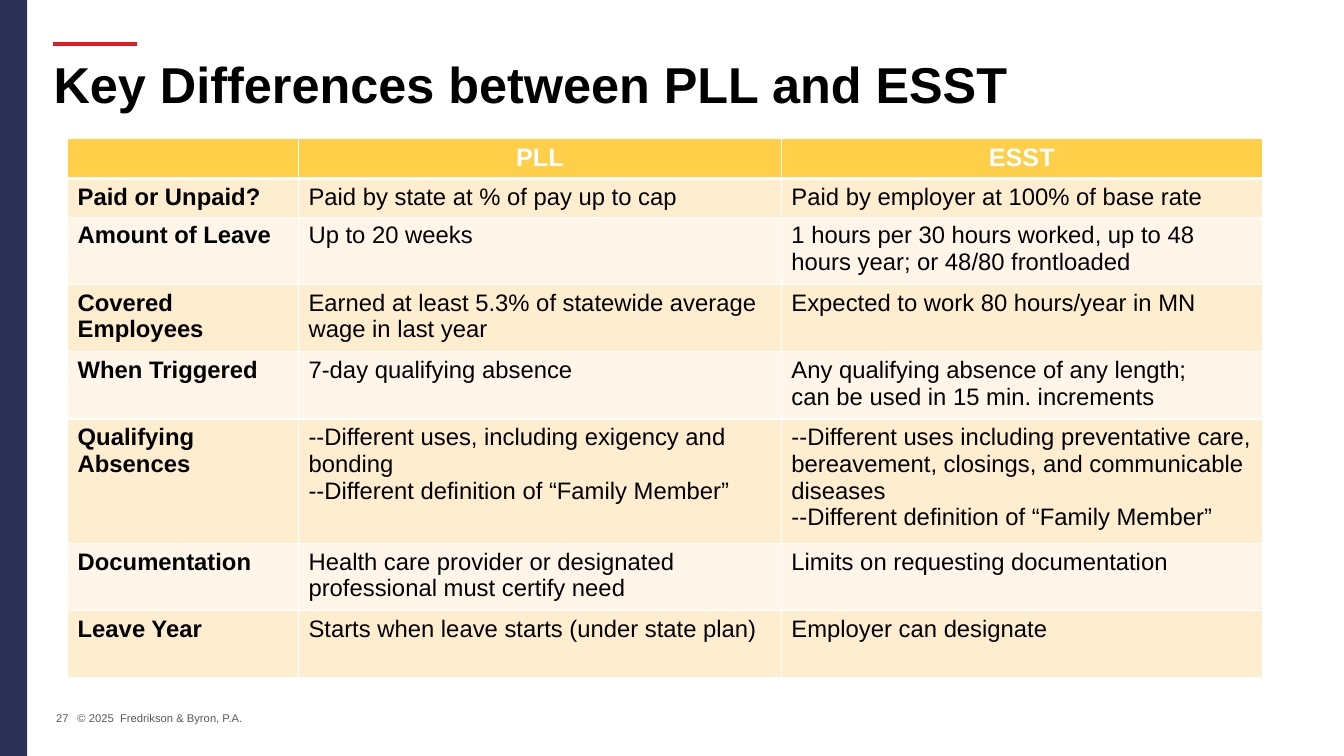
from dataclasses import dataclass

from lxml.etree import SubElement
from pptx import Presentation
from pptx.dml.color import RGBColor
from pptx.enum.shapes import MSO_CONNECTOR as Connector, MSO_SHAPE as Shape
from pptx.enum.text import MSO_ANCHOR as Anchor, PP_ALIGN as Align
from pptx.oxml.ns import qn
from pptx.util import Inches, Pt

COLORS = {
    "navy": "2C3054", "red": "E31B23", "gray": "595959", "black": "000000",
    "white": "FFFFFF", "gold": "FFCF49", "sand": "FFEDD0", "cream": "FFF6E9",
}
FONT = "Arial"
WIDTH, HEIGHT = Inches(13.33), Inches(7.5)


@dataclass(frozen=True)
class Area:
    """A rectangle in percent of the slide's width and height."""
    left: float
    top: float
    width: float
    height: float

    def lengths(self) -> tuple:
        return across(self.left), down(self.top), across(self.width), down(self.height)


@dataclass(frozen=True)
class Row:
    """A table row: its height in percent of the slide and its cell texts."""
    height: float
    cells: tuple


@dataclass(frozen=True)
class Footer:
    text: str
    area: Area
    align: Align


COLUMN_WIDTHS = (17.18, 35.93, 35.78)
ONE_LINE, TWO_LINES, FOUR_LINES = 5.07, 8.8, 16.4
ROWS = (
    Row(ONE_LINE, ("", "PLL", "ESST")),
    Row(ONE_LINE, ("Paid or Unpaid?", "Paid by state at % of pay up to cap",
                   "Paid by employer at 100% of base rate")),
    Row(TWO_LINES, ("Amount of Leave", "Up to 20 weeks",
                    "1 hours per 30 hours worked, up to 48 hours year; or 48/80 frontloaded")),
    Row(TWO_LINES, ("Covered Employees",
                    "Earned at least 5.3% of statewide average wage in last year",
                    "Expected to work 80 hours/year in MN")),
    Row(TWO_LINES, ("When Triggered", "7-day qualifying absence",
                    "Any qualifying absence of any length;\ncan be used in 15 min. increments")),
    Row(FOUR_LINES, ("Qualifying Absences",
                     "--Different uses, including exigency and bonding\n"
                     "--Different definition of “Family Member”",
                     "--Different uses including preventative care, bereavement, closings, "
                     "and communicable diseases\n"
                     "--Different definition of “Family Member”")),
    Row(TWO_LINES, ("Documentation",
                    "Health care provider or designated professional must certify need",
                    "Limits on requesting documentation")),
    Row(TWO_LINES, ("Leave Year", "Starts when leave starts (under state plan)",
                    "Employer can designate")),
)
FOOTERS = (
    Footer("© 2025  Fredrikson & Byron, P.A.", Area(5.03, 93.33, 14.55, 3.33), Align.LEFT),
    Footer("27", Area(2.55, 93.07, 3.3, 3.73), Align.RIGHT),
)


def across(percent: float) -> int:
    return round(WIDTH * percent / 100)


def down(percent: float) -> int:
    return round(HEIGHT * percent / 100)


def color(name: str) -> RGBColor:
    return RGBColor.from_string(COLORS[name])


def write(frame, text: str, *, size: float, ink: str = "black", bold: bool = False,
          align: Align = Align.LEFT, spacing: float = 1.0) -> None:
    """Fill a text frame, one paragraph for each line of text."""
    frame.word_wrap = True
    for index, line in enumerate(text.split("\n")):
        para = frame.paragraphs[0] if index == 0 else frame.add_paragraph()
        para.alignment, para.line_spacing = align, spacing
        para.space_before = Pt(0)
        para.font.size = Pt(size)
        if line:
            span = para.add_run()
            span.text = line
            span.font.name, span.font.size, span.font.bold = FONT, Pt(size), bold
            span.font.color.rgb = color(ink)


def add_frame(page) -> None:
    """Side band and the short rule above the title."""
    band = page.shapes.add_shape(Shape.RECTANGLE, *Area(0, 0, 2.03, 100).lengths())
    band.shadow.inherit = False
    band.fill.solid()
    band.fill.fore_color.rgb = color("navy")
    band.line.fill.background()

    rule = page.shapes.add_connector(Connector.STRAIGHT, across(3.98), down(5.87),
                                     across(10.2), down(5.87))
    rule.line.color.rgb, rule.line.width = color("red"), Pt(3)
    SubElement(rule._element.spPr, qn("a:effectLst"))


def add_title(page, text: str) -> None:
    title = page.shapes.title
    title.left, title.top, title.width, title.height = Area(3.98, 5.2, 92.27, 10.67).lengths()
    frame = title.text_frame
    frame.margin_left, frame.margin_top = 0, Inches(0.2)
    frame.margin_right, frame.margin_bottom = Inches(0.1), Inches(0.05)
    frame.vertical_anchor = Anchor.TOP
    write(frame, text, size=36, bold=True, spacing=0.9)


def add_footer(page, footer: Footer) -> None:
    box = page.shapes.add_textbox(*footer.area.lengths())
    box.text_frame.vertical_anchor = Anchor.MIDDLE
    write(box.text_frame, footer.text, size=8, ink="gray", align=footer.align)


def set_borders(cell, top: float, bottom: float) -> None:
    """White borders, with widths in points; called before the cell's fill."""
    properties = cell._tc.get_or_add_tcPr()
    for side, width in (("L", 1), ("R", 1), ("T", top), ("B", bottom)):
        line = SubElement(properties, qn(f"a:ln{side}"), w=str(Pt(width)))
        fill = SubElement(line, qn("a:solidFill"))
        SubElement(fill, qn("a:srgbClr"), val=COLORS["white"])


def add_comparison(page) -> None:
    area = Area(5.03, 18.27, sum(COLUMN_WIDTHS), sum(row.height for row in ROWS))
    table = page.shapes.add_table(len(ROWS), len(COLUMN_WIDTHS), *area.lengths()).table
    table.horz_banding = False
    for column, width in zip(table.columns, COLUMN_WIDTHS):
        column.width = across(width)

    for row_index, row in enumerate(ROWS):
        table.rows[row_index].height = down(row.height)
        header = row_index == 0
        band = "gold" if header else "sand" if row_index % 2 else "cream"
        for column_index, text in enumerate(row.cells):
            cell = table.cell(row_index, column_index)
            set_borders(cell, top=3 if row_index == 1 else 1, bottom=3 if header else 1)
            cell.fill.solid()
            cell.fill.fore_color.rgb = color(band)
            write(cell.text_frame, text, size=18 if header else 17,
                  ink="white" if header else "black", bold=header or column_index == 0,
                  align=Align.CENTER if header else Align.LEFT)


def main() -> None:
    deck = Presentation()
    deck.slide_width, deck.slide_height = WIDTH, HEIGHT
    page = deck.slides.add_slide(deck.slide_layouts[5])
    add_frame(page)
    add_title(page, "Key Differences between PLL and ESST")
    for footer in FOOTERS:
        add_footer(page, footer)
    add_comparison(page)
    deck.save("out.pptx")


if __name__ == "__main__":
    main()
